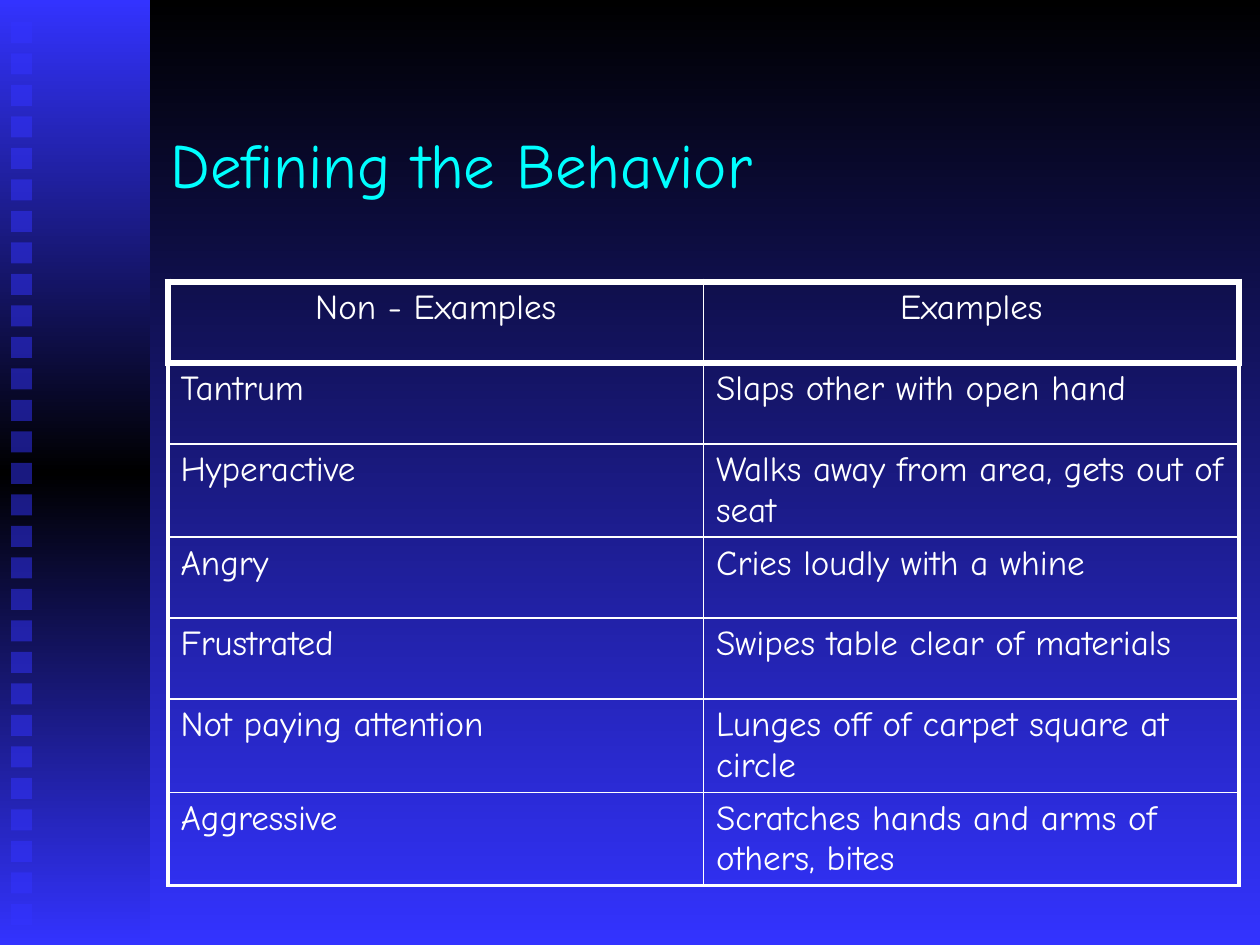
import copy

import pptx
import pptx.dml.color
import pptx.enum.shapes
import pptx.enum.text
import pptx.oxml
import pptx.oxml.ns
import pptx.util

HEADING = "Defining the Behavior"
BEHAVIORS = [
    ("Non - Examples", "Examples"),
    ("Tantrum", "Slaps other with open hand"),
    ("Hyperactive", "Walks away from area, gets out of seat"),
    ("Angry", "Cries loudly with a whine"),
    ("Frustrated", "Swipes table clear of materials"),
    ("Not paying attention", "Lunges off of carpet square at circle"),
    ("Aggressive", "Scratches hands and arms of others, bites"),
]

FONT = "Comic Neue"
BLACK = pptx.dml.color.RGBColor(0x00, 0x00, 0x00)
BLUE = pptx.dml.color.RGBColor(0x33, 0x33, 0xFF)
CYAN = pptx.dml.color.RGBColor(0x00, 0xFF, 0xFF)
WHITE = pptx.dml.color.RGBColor(0xFF, 0xFF, 0xFF)

PX_PER_INCH = 126
SLIDE_W, SLIDE_H = 1260, 945
STRIP_W = 150
SQUARE_COUNT, SQUARE_LEFT, SQUARE_TOP, SQUARE_SIZE = 29, 11, 22, 21
SQUARE_PITCH = 31.5
HEADER_LINE, OUTER_LINE, INNER_LINE = 4.5, 2.25, 1


def px(length):
    return pptx.util.Emu(round(length * 914400 / PX_PER_INCH))


def box(*lengths):
    return [px(length) for length in lengths]


def shade_down(fill, colors):
    fill.gradient()
    fill.gradient_angle = 270
    first = fill.gradient_stops[0]._gs
    for _ in colors[2:]:
        first.addnext(copy.deepcopy(first))
    for i, (stop, color) in enumerate(zip(fill.gradient_stops, colors)):
        stop.position = i / (len(colors) - 1)
        stop.color.rgb = color


def add_rectangle(slide, *lengths):
    rectangle = slide.shapes.add_shape(
        pptx.enum.shapes.MSO_SHAPE.RECTANGLE, *box(*lengths))
    rectangle.shadow.inherit = False
    rectangle.line.fill.background()
    return rectangle


def add_strip(slide):
    strip = add_rectangle(slide, 0, 0, STRIP_W, SLIDE_H)
    shade_down(strip.fill, [BLUE, BLACK, BLUE])
    for i in range(SQUARE_COUNT):
        square = add_rectangle(slide, SQUARE_LEFT, SQUARE_TOP + i * SQUARE_PITCH,
                               SQUARE_SIZE, SQUARE_SIZE)
        square.fill.solid()
        square.fill.fore_color.rgb = BLUE
        tint = square.fill._xPr.find(".//" + pptx.oxml.ns.qn("a:srgbClr"))
        tint.append(pptx.oxml.parse_xml(
            f'<a:alpha {pptx.oxml.ns.nsdecls("a")} val="50000"/>'))


def style(paragraph, size, color, alignment):
    paragraph.alignment = alignment
    paragraph.font.name = FONT
    paragraph.font.size = pptx.util.Pt(size)
    paragraph.font.color.rgb = color


def add_heading(slide):
    heading = slide.shapes.title
    heading.left, heading.top, heading.width, heading.height = box(158, 84, 1071, 158)
    heading.text_frame.text = HEADING
    heading.text_frame.vertical_anchor = pptx.enum.text.MSO_ANCHOR.MIDDLE
    style(heading.text_frame.paragraphs[0], 36, CYAN, pptx.enum.text.PP_ALIGN.LEFT)


def set_borders(cell, widths):
    properties = cell._tc.get_or_add_tcPr()
    for side, width in widths.items():
        properties.append(pptx.oxml.parse_xml(
            f'<a:ln{side} {pptx.oxml.ns.nsdecls("a")} w="{pptx.util.Pt(width)}">'
            f'<a:solidFill><a:srgbClr val="{WHITE}"/></a:solidFill></a:ln{side}>'))


def add_behaviors(slide):
    last = len(BEHAVIORS) - 1
    table = slide.shapes.add_table(
        len(BEHAVIORS), 2, *box(168, 282, 1071, 81 * len(BEHAVIORS))).table
    table.first_row = table.horz_banding = False
    for r, row in enumerate(BEHAVIORS):
        edge = HEADER_LINE if r == 0 else OUTER_LINE
        for c, wording in enumerate(row):
            cell = table.cell(r, c)
            cell.text = wording
            style(cell.text_frame.paragraphs[0], 20, WHITE,
                  pptx.enum.text.PP_ALIGN.CENTER if r == 0
                  else pptx.enum.text.PP_ALIGN.LEFT)
            set_borders(cell, {
                "L": edge if c == 0 else INNER_LINE,
                "R": edge if c == 1 else INNER_LINE,
                "T": HEADER_LINE if r < 2 else INNER_LINE,
                "B": edge if r in (0, last) else INNER_LINE,
            })
            cell.fill.background()


def main():
    deck = pptx.Presentation()
    deck.slide_width, deck.slide_height = box(SLIDE_W, SLIDE_H)
    slide = deck.slides.add_slide(deck.slide_layouts.get_by_name("Title Only"))
    shade_down(slide.background.fill, [BLACK, BLUE])
    add_strip(slide)
    add_heading(slide)
    add_behaviors(slide)
    deck.save("out.pptx")


if __name__ == "__main__":
    main()
